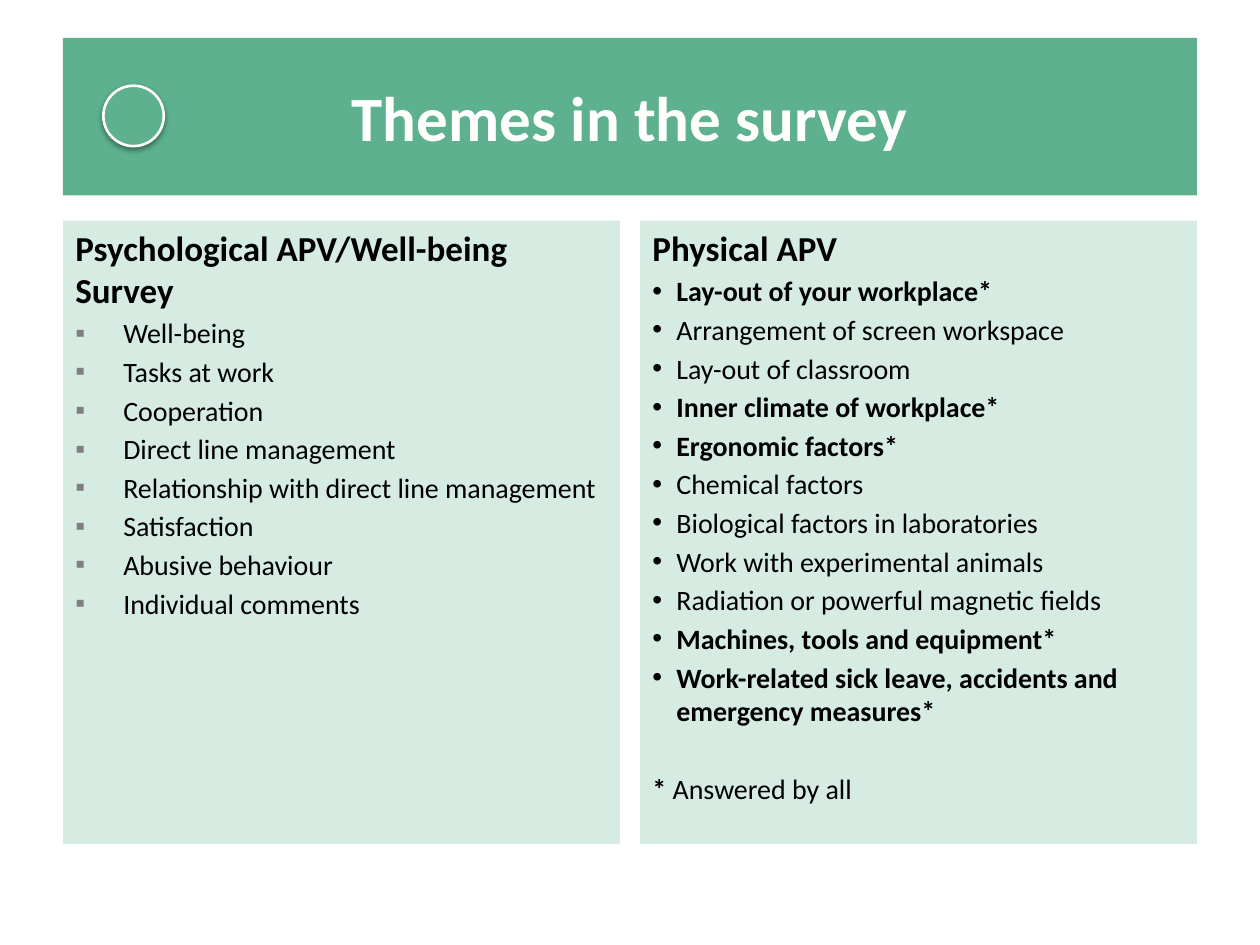
"""Build the slide that lists the themes of the survey."""
import pptx
import pptx.dml.color
import pptx.enum.shapes
import pptx.enum.text
import pptx.oxml
import pptx.oxml.ns
import pptx.util
from lxml import etree

Inches = pptx.util.Inches
Pt = pptx.util.Pt
RGBColor = pptx.dml.color.RGBColor
MSO_SHAPE = pptx.enum.shapes.MSO_SHAPE
PP_ALIGN = pptx.enum.text.PP_ALIGN
MSO_ANCHOR = pptx.enum.text.MSO_ANCHOR
qn = pptx.oxml.ns.qn

GREEN = RGBColor(0x5D, 0xB1, 0x8E)
WHITE = RGBColor(0xFF, 0xFF, 0xFF)
BLACK = RGBColor(0x00, 0x00, 0x00)
GREY = RGBColor(0x7F, 0x7F, 0x7F)

TITLE = {"name": "Calibri", "size": Pt(36), "bold": True}
HEADING = {"name": "Calibri", "size": Pt(20), "bold": True}
ITEM = {"name": "Calibri", "size": Pt(16), "bold": False}
STRONG = {**ITEM, "bold": True}
GAP = Pt(2.9)

PANELS = [
    {
        "heading": "Psychological APV/Well-being Survey",
        "bullet": "▪", "bullet_color": GREY, "indent": Inches(0.38),
        "items": ["Well-being", "Tasks at work", "Cooperation",
                  "Direct line management",
                  "Relationship with direct line management",
                  "Satisfaction", "Abusive behaviour", "Individual comments"],
    },
    {
        "heading": "Physical APV",
        "bullet": "•", "bullet_color": BLACK, "indent": Inches(0.19),
        "items": ["Lay-out of your workplace*", "Arrangement of screen workspace",
                  "Lay-out of classroom", "Inner climate of workplace*",
                  "Ergonomic factors*", "Chemical factors",
                  "Biological factors in laboratories",
                  "Work with experimental animals",
                  "Radiation or powerful magnetic fields",
                  "Machines, tools and equipment*",
                  "Work-related sick leave, accidents and emergency measures*"],
    },
]


def add_box(kind, left, top, width, height):
    sp = s.shapes.add_shape(kind, Inches(left), Inches(top), Inches(width), Inches(height))
    sp.shadow.inherit = False
    sp.fill.solid()
    sp.fill.fore_color.rgb = GREEN
    sp.line.fill.background()
    sp.text_frame.word_wrap = True
    return sp


def add_run(p, text, font, color=BLACK):
    r = p.add_run()
    r.text = text
    for key, value in font.items():
        setattr(r.font, key, value)
    r.font.color.rgb = color


prs = pptx.Presentation()
prs.slide_width = Inches(10)
prs.slide_height = Inches(7.5)
s = prs.slides.add_slide(prs.slide_layouts[6])

sp = add_box(MSO_SHAPE.RECTANGLE, 0.5, 0.3, 9, 1.25)
sp.text_frame.vertical_anchor = MSO_ANCHOR.MIDDLE
p = sp.text_frame.paragraphs[0]
p.alignment = PP_ALIGN.CENTER
add_run(p, "Themes in the survey", TITLE, WHITE)

for i, panel in enumerate(PANELS):
    sp = add_box(MSO_SHAPE.RECTANGLE, 0.5 + 4.58 * i, 1.75, 4.42, 4.95)
    color = sp.fill._xPr.find(qn("a:solidFill"))[0]
    etree.SubElement(color, qn("a:alpha"), val="25000")
    tf = sp.text_frame
    tf.vertical_anchor = MSO_ANCHOR.TOP
    p = tf.paragraphs[0]
    p.alignment = PP_ALIGN.LEFT
    add_run(p, panel["heading"], HEADING)
    for item in panel["items"]:
        p = tf.add_paragraph()
        p.alignment = PP_ALIGN.LEFT
        p.space_before = GAP
        pPr = p._p.get_or_add_pPr()
        pPr.set("marL", str(panel["indent"]))
        pPr.set("indent", str(-panel["indent"]))
        buClr = etree.SubElement(pPr, qn("a:buClr"))
        etree.SubElement(buClr, qn("a:srgbClr"), val=str(panel["bullet_color"]))
        etree.SubElement(pPr, qn("a:buFont"), typeface="Arial")
        etree.SubElement(pPr, qn("a:buChar"), char=panel["bullet"])
        add_run(p, item, STRONG if item.endswith("*") else ITEM)

p = tf.add_paragraph()
p.alignment = PP_ALIGN.LEFT
p.space_before = Pt(25.3)
add_run(p, "* ", STRONG)
add_run(p, "Answered by all", ITEM)

sp = add_box(MSO_SHAPE.OVAL, 0.82, 0.68, 0.48, 0.48)
sp.line.color.rgb = WHITE
sp.line.width = Pt(1.5)
effects = sp._element.spPr.find(qn("a:effectLst"))
shadow = etree.SubElement(effects, qn("a:outerShdw"), blurRad=str(Pt(3.1)),
                          dist=str(Pt(1.6)), dir="5400000", rotWithShape="0")
color = etree.SubElement(shadow, qn("a:srgbClr"), val=str(BLACK))
etree.SubElement(color, qn("a:alpha"), val="38000")

prs.save("out.pptx")
